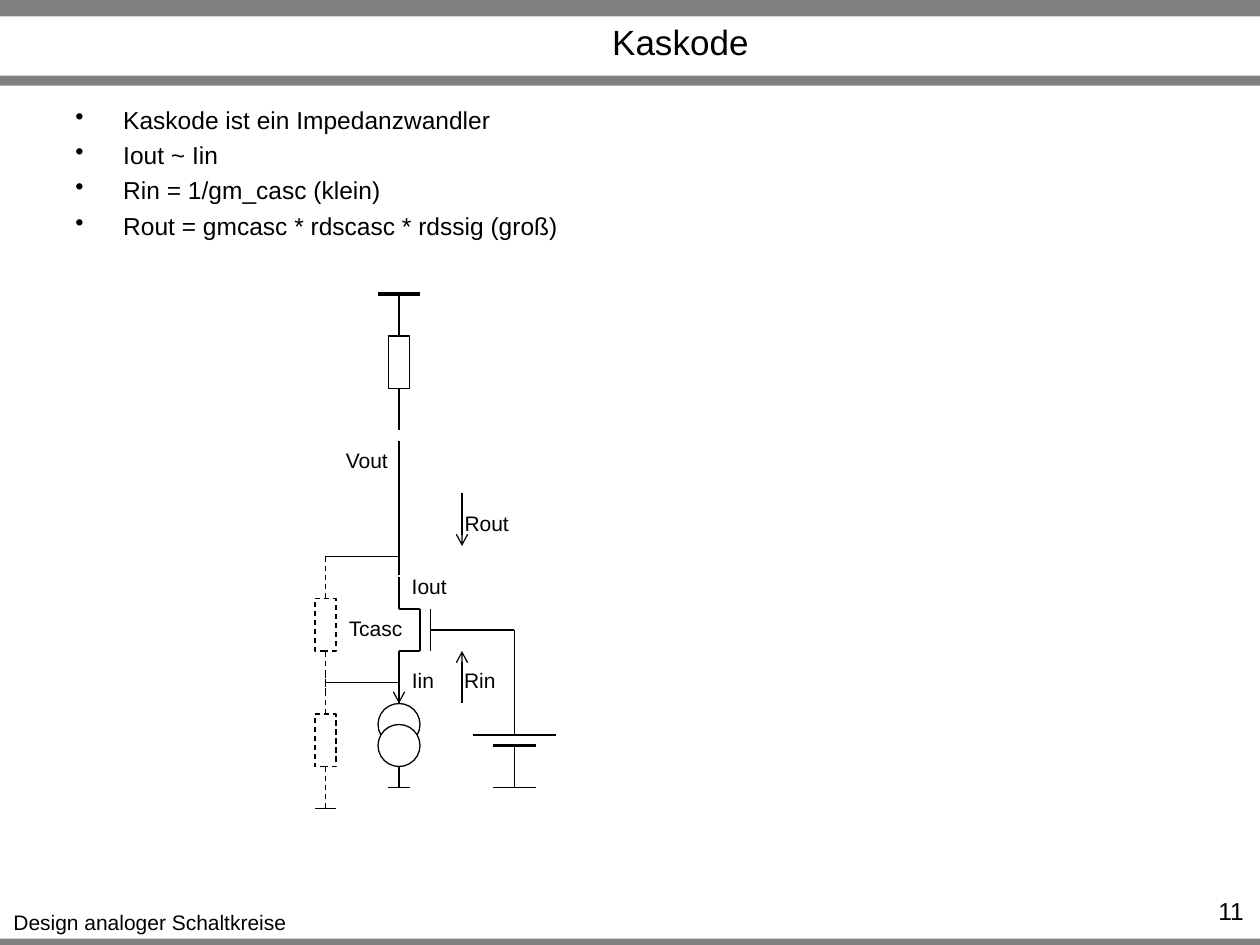
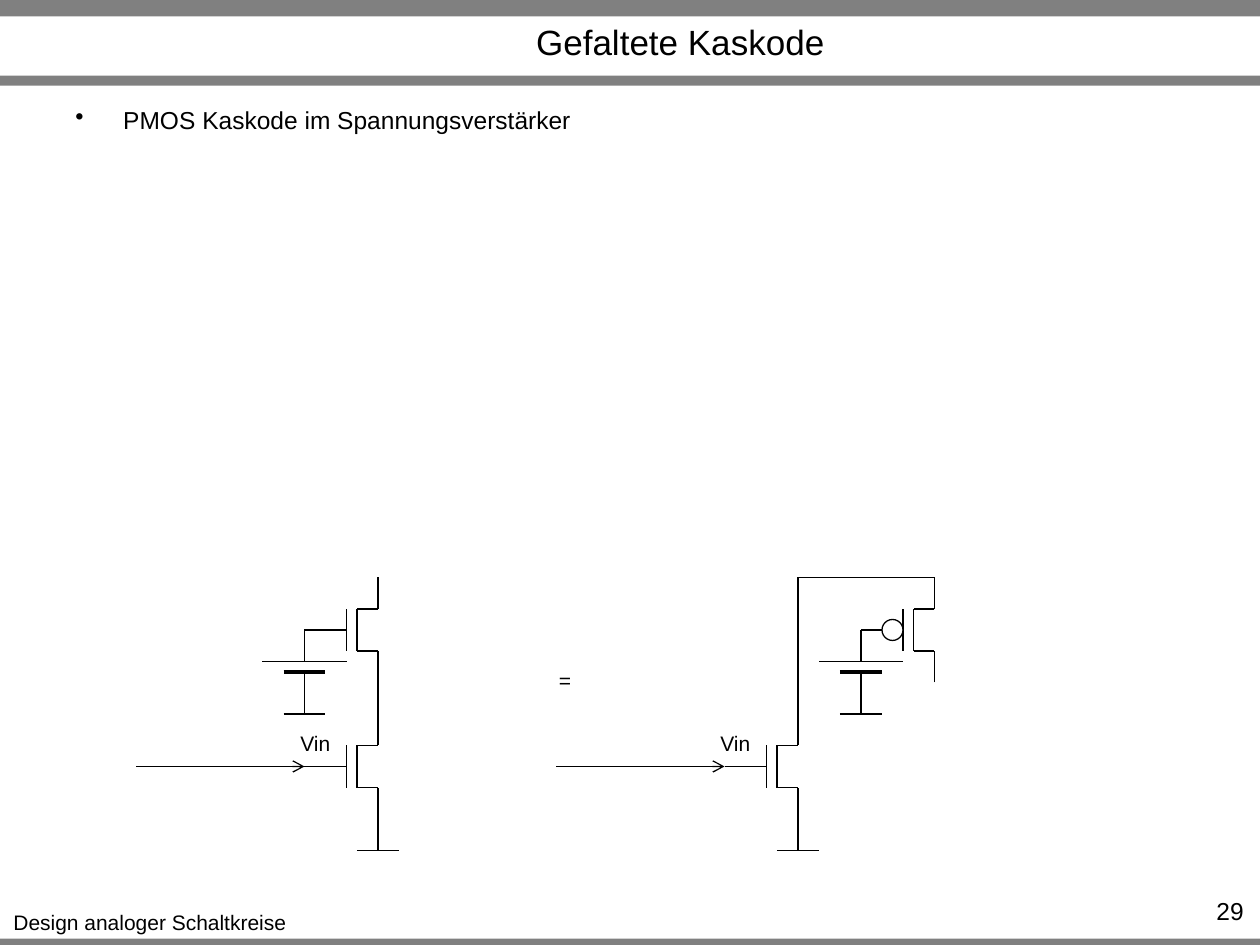
import collections
import dataclasses

import lxml.etree
import pptx
import pptx.dml.color
import pptx.enum.dml
import pptx.enum.shapes
import pptx.enum.text
import pptx.oxml.ns
import pptx.util

Inches = pptx.util.Inches
Pt = pptx.util.Pt
RGB = pptx.dml.color.RGBColor
Align = pptx.enum.text.PP_ALIGN
Anchor = pptx.enum.text.MSO_ANCHOR
Kind = pptx.enum.shapes.MSO_SHAPE
Dash = pptx.enum.dml.MSO_LINE.DASH
qn = pptx.oxml.ns.qn

Box = collections.namedtuple("Box", "left top width height")
PAGE = Box(0, 0, 10, 7.5)


@dataclasses.dataclass(frozen=True)
class Theme:
    font: str = "Arial"
    ink: RGB = RGB(0, 0, 0)
    paper: RGB = RGB(255, 255, 255)
    band: RGB = RGB(128, 128, 128)
    title: float = 20
    body: float = 14
    label: float = 12
    gap: float = 3.4
    thin: float = 0.75
    rail: float = 1.75
    thick: float = 2


THEME = Theme()


def assign(item, values):
    for name, value in values.items():
        setattr(item, name, value)


def grid(count):
    """Circuits sit on a grid of twelve steps to the inch."""
    return Inches(count / 12)


# Basic parts

def write(shapes, box, lines, size, align=Align.LEFT, bullets=False, **frame):
    item = shapes.add_textbox(*map(Inches, box))
    text = item.text_frame
    assign(text, {"word_wrap": True, **frame})
    for index, line in enumerate(lines):
        para = text.paragraphs[0] if index == 0 else text.add_paragraph()
        if bullets:
            props = para._p.get_or_add_pPr()
            assign_indent = {"marL": Inches(0.38), "indent": Inches(-0.38)}
            for name, value in assign_indent.items():
                props.set(name, str(value))
            lxml.etree.SubElement(props, qn("a:buChar"), char="•")
            para.space_before = Pt(THEME.gap if index else 0)
        para.alignment = align
        run = para.add_run()
        run.text = line
        assign(run.font, {"name": THEME.font, "size": Pt(size)})
        run.font.color.rgb = THEME.ink


def label(shapes, x, y, width, text):
    write(shapes, Box(x / 12, y / 12, width, 0.3), [text], THEME.label,
          Align.CENTER, word_wrap=False)


def wire(shapes, x1, y1, x2, y2, weight=THEME.thin, dash=None, arrow=False):
    link = shapes.add_connector(pptx.enum.shapes.MSO_CONNECTOR.STRAIGHT,
                                *map(grid, (x1, y1, x2, y2)))
    link.line.color.rgb = THEME.ink
    assign(link.line, {"width": Pt(weight), "dash_style": dash})
    if arrow:
        lxml.etree.SubElement(link.line._ln, qn("a:tailEnd"), type="arrow")
    lxml.etree.SubElement(link._element.spPr, qn("a:effectLst"))
    return link


def outline(shapes, kind, x, y, width, height, fill=None, dash=None):
    item = shapes.add_shape(kind, *map(grid, (x, y, width, height)))
    item.shadow.inherit = False
    if fill is None:
        item.fill.background()
    else:
        item.fill.solid()
        item.fill.fore_color.rgb = fill
    item.line.color.rgb = THEME.ink
    assign(item.line, {"width": Pt(THEME.thin), "dash_style": dash})
    return item


# Circuit symbols, each in its own group

def fet(shapes, x, y, side):
    """Channel column at x, gate height at y; side is 1 right or -1 left."""
    part = shapes.add_group_shape().shapes
    for x1, y1, x2, y2 in [(0, 2, 2, 2), (2, 2, 2, -2), (5, 0, 3, 0),
                           (3, 2, 3, -2), (0, -2, 2, -2), (0, -2, 0, -5),
                           (0, 5, 0, 2), (5, 0, 7, 0)]:
        wire(part, x + side * x1, y + y1, x + side * x2, y + y2)


def battery(shapes, x, y):
    part = shapes.add_group_shape().shapes
    wire(part, x, y, x, y + 3)
    wire(part, x, y + 4, x, y + 8)
    wire(part, x - 2, y + 8, x + 2, y + 8)
    wire(part, x - 2, y + 4, x + 2, y + 4, THEME.thick)
    wire(part, x - 4, y + 3, x + 4, y + 3)


def ohm(shapes, x, y, dash=None):
    part = shapes.add_group_shape().shapes
    body = outline(part, Kind.RECTANGLE, x - 1, y + 4, 2, 5, dash=dash)
    wire(part, x, y + 13, x, y + 9, dash=dash).end_connect(body, 2)
    wire(part, x, y + 4, x, y, dash=dash).begin_connect(body, 0)


def source(shapes, x, y):
    part = shapes.add_group_shape().shapes
    wire(part, x, y, x, y + 2)
    for step in (2, 4):
        outline(part, Kind.OVAL, x - 2, y + step, 4, 4, THEME.paper)
    wire(part, x, y + 8, x, y + 10)


def ground(shapes, x, y, half):
    wire(shapes, x - half, y, x + half, y)


# Page frame: bands, footer, title, bullets, number

def frame(shapes, box, title, lines, number):
    for top, height in [(7.45, 0.08), (0, 0.13), (0.6, 0.08)]:
        band = shapes.add_shape(Kind.RECTANGLE, *map(
            Inches, (box.left, box.top + top, box.width, height)))
        band.shadow.inherit = False
        band.fill.solid()
        band.fill.fore_color.rgb = THEME.band
        band.line.fill.background()

    def place(left, top, width, height):
        return Box(box.left + left, box.top + top, width, height)

    write(shapes, place(0, 7.17, 2.38, 0.3), ["Design analoger Schaltkreise"],
          THEME.label, Align.CENTER, word_wrap=False)
    write(shapes, place(1.3, 0.14, 8.2, 0.38), [title], THEME.title,
          Align.CENTER, vertical_anchor=Anchor.MIDDLE)
    write(shapes, place(0.5, 0.76, 9, 0.91), lines, THEME.body,
          bullets=True, margin_top=Inches(0.07))
    write(shapes, place(9.1, 7.06, 0.87, 0.24), [str(number)], THEME.body,
          Align.RIGHT)


# Cascode: x is the main column, y the supply rail

def cascode(shapes, x, y):
    # Load and output
    ohm(shapes, x, y)
    wire(shapes, x - 2, y, x + 2, y, THEME.rail)
    wire(shapes, x, y + 26.8, x, y + 14)
    # Transistor, input current and gate bias
    fet(shapes, x, y + 32, 1)
    source(shapes, x, y + 37)
    wire(shapes, x, y + 37, x, y + 39, arrow=True)
    ground(shapes, x, y + 47, 1)
    battery(shapes, x + 11, y + 39)
    wire(shapes, x + 7, y + 32, x + 11, y + 32)
    wire(shapes, x + 11, y + 39, x + 11, y + 32)
    # Dashed output resistances
    for top in (25, 36):
        ohm(shapes, x - 7, y + top, Dash)
    for top in (25, 37):
        wire(shapes, x - 7, y + top, x, y + top)
    ground(shapes, x - 7, y + 49, 1)
    # Resistance arrows and labels
    for start, end in [(39, 34), (19, 24)]:
        wire(shapes, x + 6, y + start, x + 6, y + end, arrow=True)
    for left, top, width, text in [
            (0, 35, 0.38, "Iin"), (0, 26, 0.48, "Iout"),
            (-6, 30, 0.63, "Tcasc"), (5, 35, 0.45, "Rin"),
            (5, 20, 0.56, "Rout"), (-6.3, 14, 0.54, "Vout")]:
        label(shapes, x + left, y + top, width, text)


# Folded cascode: x is the drain column, y the top of the circuit

def stage(shapes, x, y, top):
    """Input transistor, with its drain wire drawn up to top."""
    wire(shapes, x, y + top, x, y + 13)
    fet(shapes, x, y + 18, -1)
    ground(shapes, x, y + 26, 2)
    wire(shapes, x, y + 23, x, y + 26)
    wire(shapes, x - 23, y + 18, x - 7, y + 18, arrow=True)
    label(shapes, x - 8.6, y + 14, 0.44, "Vin")


def biased(shapes, x, y):
    """Cascode transistor with its bias battery."""
    fet(shapes, x, y + 5, -1)
    battery(shapes, x - 7, y + 5)


def folded(shapes, x, y):
    # Plain cascode
    biased(shapes, x, y)
    stage(shapes, x, y, 7)
    label(shapes, x + 16, y + 8, 0.3, "=")
    # Folded form with a PMOS transistor
    right, fold = x + 40, x + 53
    biased(shapes, fold, y)
    stage(shapes, right, y, 0)
    outline(shapes, Kind.OVAL, fold - 5, y + 4, 2, 2, THEME.paper)
    wire(shapes, fold, y, right, y)


def main():
    deck = pptx.Presentation()
    assign(deck, {"slide_width": Inches(PAGE.width),
                  "slide_height": Inches(PAGE.height)})
    pages = [
        ("Kaskode", 11, cascode, 38, 28,
         ["Kaskode ist ein Impedanzwandler", "Iout ~ Iin",
          "Rin = 1/gm_casc (klein)",
          "Rout = gmcasc * rdscasc * rdssig (groß)"]),
        ("Gefaltete Kaskode", 29, folded, 36, 55,
         ["PMOS Kaskode im Spannungsverstärker"]),
    ]
    for title, number, draw, x, y, lines in pages:
        shapes = deck.slides.add_slide(deck.slide_layouts[6]).shapes
        frame(shapes, PAGE, title, lines, number)
        draw(shapes, x, y)
    deck.save("out.pptx")


if __name__ == "__main__":
    main()
